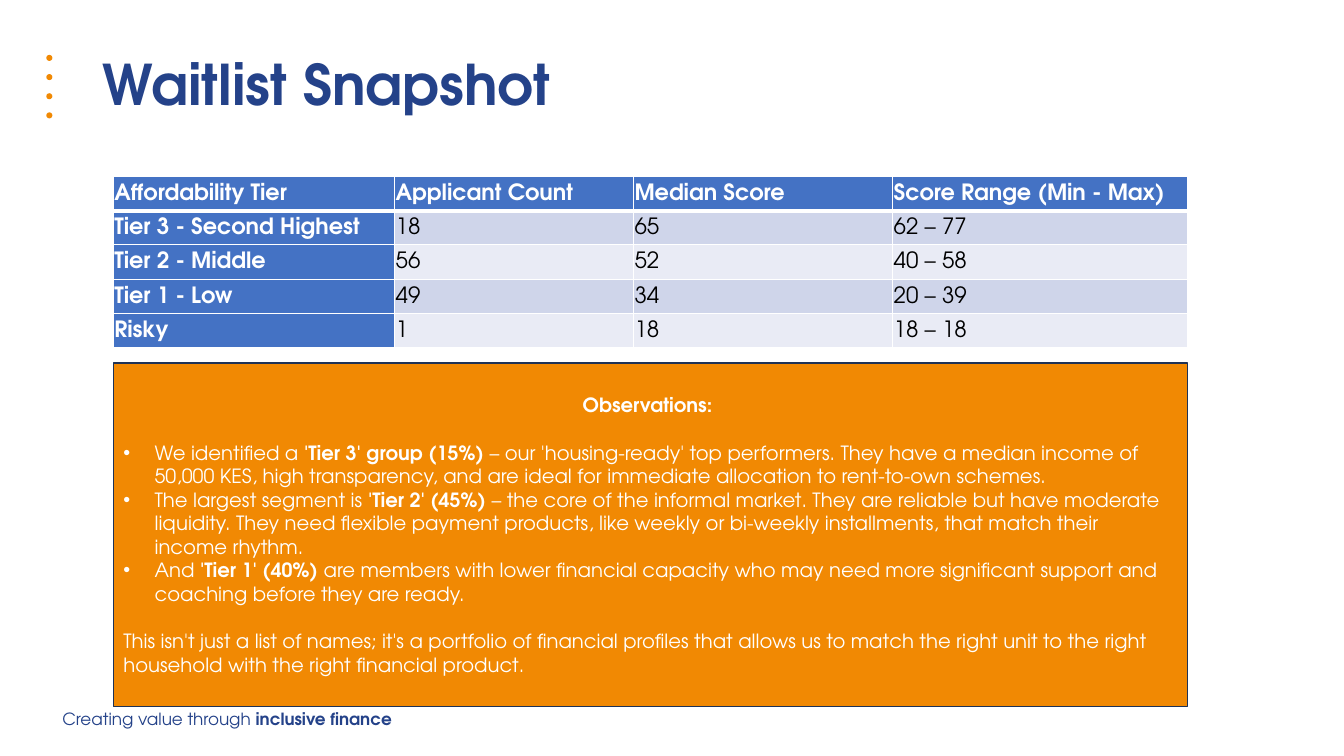
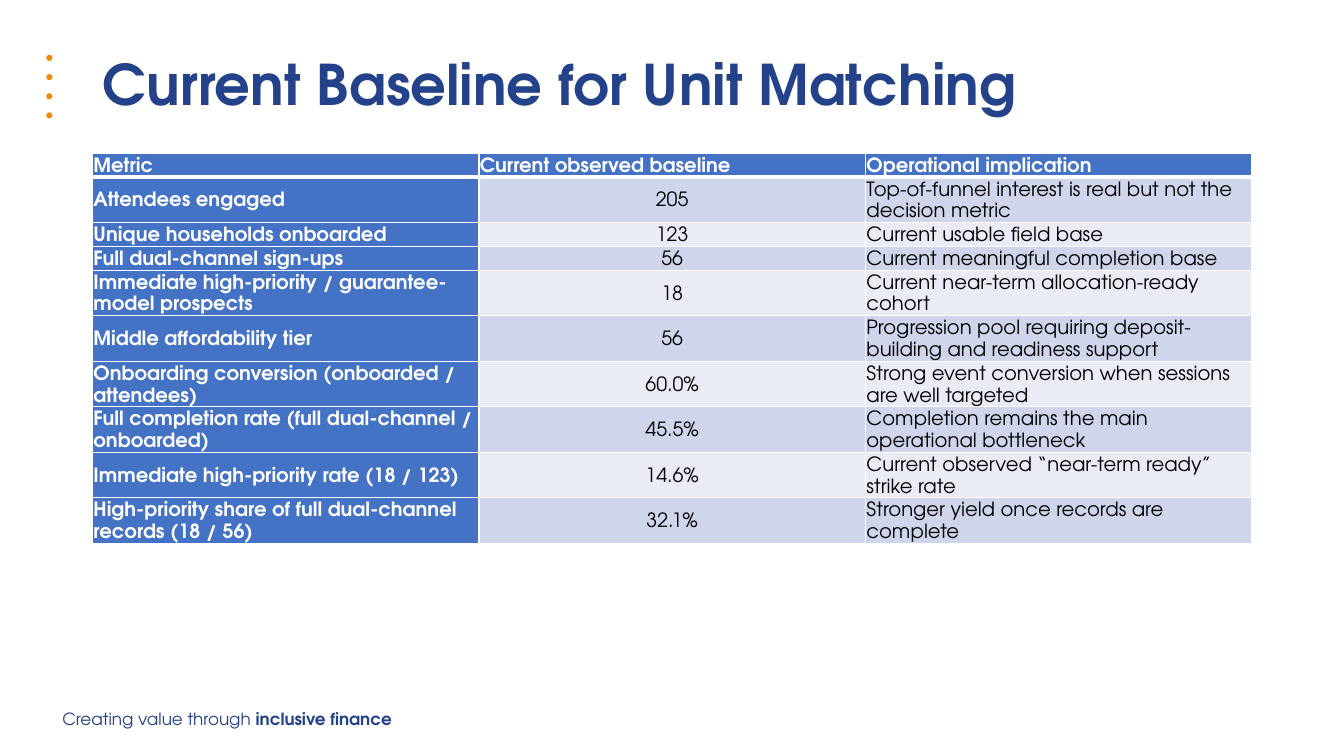
from dataclasses import dataclass

import pptx
import pptx.dml.color
import pptx.enum.shapes
import pptx.enum.text
import pptx.oxml.ns
import pptx.util
from lxml import etree

ALIGN = pptx.enum.text.PP_ALIGN
MIDDLE = pptx.enum.text.MSO_ANCHOR.MIDDLE
SHAPES = pptx.enum.shapes.MSO_SHAPE
qn = pptx.oxml.ns.qn


@dataclass(frozen=True)
class Theme:
    font: str = "TeX Gyre Adventor"
    bullet_font: str = "Arial"
    navy: str = "244289"
    outline: str = "1E3256"
    orange: str = "F18903"
    blue: str = "4472C4"
    dark_band: str = "CFD5EA"
    light_band: str = "E9EBF5"
    white: str = "FFFFFF"
    black: str = "000000"
    title_size: int = 40
    table_size: int = 16
    body_size: int = 14
    footer_size: int = 12


THEME = Theme()
CELL = 0.1  # inches: width of a grid column and height of a grid row


def grid(cells):
    return pptx.util.Inches(cells * CELL)


def area(left, top, width, height):
    return [grid(length) for length in (left, top, width, height)]


def color(value):
    return pptx.dml.color.RGBColor.from_string(value)


def write(paragraph, text, size=THEME.body_size, fill=THEME.white, bold=False,
          align=ALIGN.LEFT, line_spacing=1.0, space_before=0, space_after=0, bullet=False):
    """Fill a paragraph; parts between ** marks are bold."""
    paragraph.alignment = align
    paragraph.line_spacing = line_spacing
    paragraph.space_before = pptx.util.Pt(space_before)
    paragraph.space_after = pptx.util.Pt(space_after)
    if bullet:
        properties = paragraph._p.get_or_add_pPr()
        properties.set("marL", str(grid(3.1)))
        properties.set("indent", str(-grid(3.1)))
        etree.SubElement(properties, qn("a:buFont"), typeface=THEME.bullet_font)
        etree.SubElement(properties, qn("a:buChar"), char="•")
    for index, part in enumerate(text.split("**")):
        if part:
            run = paragraph.add_run()
            run.text = part
            run.font.name = THEME.font
            run.font.size = pptx.util.Pt(size)
            run.font.bold = bold or index % 2 == 1
            run.font.color.rgb = color(fill)


def add_border(cell, side, points):
    line = etree.SubElement(cell._tc.get_or_add_tcPr(), qn("a:ln" + side),
                            w=str(pptx.util.Pt(points)))
    fill = etree.SubElement(line, qn("a:solidFill"))
    etree.SubElement(fill, qn("a:srgbClr"), val=THEME.white)


class Deck:
    def __init__(self):
        self.presentation = pptx.Presentation()
        self.presentation.slide_width = pptx.util.Inches(13.33)
        self.presentation.slide_height = pptx.util.Inches(7.5)
        self.layout = self.presentation.slide_layouts[5]
        self.slide = None

    def add_slide(self, title):
        first = self.slide is None
        self.slide = self.presentation.slides.add_slide(self.layout)
        if first:
            self.decorate_layout()
        shape = self.slide.shapes.title
        shape.left, shape.top, shape.width, shape.height = area(9.2, 4, 115, 9.4)
        frame = shape.text_frame
        frame.auto_size = pptx.enum.text.MSO_AUTO_SIZE.NONE
        frame.vertical_anchor = MIDDLE
        write(frame.paragraphs[0], title, size=THEME.title_size, fill=THEME.navy,
              bold=True, line_spacing=0.9)

    def decorate_layout(self):
        """Draw the dots and the footer, then hand them to the layout."""
        dots = self.slide.shapes.add_group_shape()
        for row in range(4):
            self.add_shape(SHAPES.OVAL, (4.6, 5.45 + 1.9 * row, 0.6, 0.6), THEME.orange,
                           shapes=dots.shapes)
        footer = self.slide.shapes.add_textbox(*area(5.2, 69.8, 35.3, 3))
        footer.text_frame.word_wrap = False
        footer.text_frame.vertical_anchor = MIDDLE
        write(footer.text_frame.paragraphs[0], "Creating value through **inclusive finance**",
              size=THEME.footer_size, fill=THEME.navy)
        tree = self.layout.shapes.element
        for shape in (dots, footer):
            tree.append(shape.element)
        for number, properties in enumerate(tree.iter(qn("p:cNvPr")), 1):
            properties.set("id", str(number))

    def add_shape(self, kind, place, fill, outline=None, shapes=None):
        shapes = self.slide.shapes if shapes is None else shapes
        shape = shapes.add_shape(kind, *area(*place))
        shape.shadow.inherit = False
        shape.fill.solid()
        shape.fill.fore_color.rgb = color(fill)
        if outline:
            shape.line.color.rgb = color(outline)
            shape.line.width = pptx.util.Pt(1)
        else:
            shape.line.fill.background()
        return shape

    def add_panel(self, place, paragraphs):
        """Add an outlined box from (text, format) pairs."""
        frame = self.add_shape(SHAPES.RECTANGLE, place, THEME.orange, THEME.outline).text_frame
        frame.word_wrap = True
        frame.vertical_anchor = MIDDLE
        for index, (text, style) in enumerate(paragraphs):
            paragraph = frame.add_paragraph() if index else frame.paragraphs[0]
            write(paragraph, text, **style)

    def add_table(self, left, top, columns, heights, rows, size, line_spacing,
                  header_align=ALIGN.LEFT, aligns=None):
        aligns = aligns or [ALIGN.LEFT] * len(columns)
        table = self.slide.shapes.add_table(
            len(rows), len(columns), *area(left, top, sum(columns), sum(heights))).table
        table.horz_banding = False
        for column, width in zip(table.columns, columns):
            column.width = grid(width)
        for row_index, (height, texts) in enumerate(zip(heights, rows)):
            table.rows[row_index].height = grid(height)
            for column_index, text in enumerate(texts):
                heading = row_index == 0 or column_index == 0
                band = THEME.dark_band if row_index % 2 else THEME.light_band
                cell = table.cell(row_index, column_index)
                cell.margin_left = cell.margin_right = grid(0.1)
                cell.margin_top = cell.margin_bottom = grid(0.1)
                cell.vertical_anchor = MIDDLE
                for side in "LRTB":
                    under_header = (row_index, side) in ((0, "B"), (1, "T"))
                    add_border(cell, side, 3 if under_header else 1)
                cell.fill.solid()
                cell.fill.fore_color.rgb = color(THEME.blue if heading else band)
                write(cell.text_frame.paragraphs[0], text, size=size, bold=heading,
                      fill=THEME.white if heading else THEME.black,
                      align=aligns[column_index] if row_index else header_align,
                      line_spacing=line_spacing)


def add_waitlist(deck):
    deck.add_slide("Waitlist Snapshot")
    rows = [
        ("Affordability Tier", "Applicant Count", "Median Score", "Score Range (Min - Max)"),
        ("Tier 3 - Second Highest", "18", "65", "62 – 77"),
        ("Tier 2 - Middle", "56", "52", "40 – 58"),
        ("Tier 1 - Low", "49", "34", "20 – 39"),
        ("Risky", "1", "18", "18 – 18"),
    ]
    left = 11.25
    deck.add_table(left, 17.5, (27.9, 23.7, 25.7, 29.2), [3.4] * len(rows), rows,
                   size=THEME.table_size, line_spacing=1.07)
    gap = 17
    deck.add_panel((left, 36, 106.5, 34.1), [
        ("Observations: ", {"bold": True, "align": ALIGN.CENTER, "space_after": gap}),
        ("We identified a **'Tier 3' group (15%)** – our 'housing-ready' top performers. "
         "They have a median income of 50,000 KES, high transparency, and are ideal for "
         "immediate allocation to rent-to-own schemes.", {"bullet": True}),
        ("The largest segment is **'Tier 2' (45%)** – the core of the informal market. "
         "They are reliable but have moderate liquidity. They need flexible payment products, "
         "like weekly or bi-weekly installments, that match their income rhythm.",
         {"bullet": True}),
        ("And **'Tier 1' (40%)** are members with lower financial capacity who may need more "
         "significant support and coaching before they are ready.", {"bullet": True}),
        ("This isn't just a list of names; it's a portfolio of financial profiles that allows "
         "us to match the right unit to the right household with the right financial product.",
         {"space_before": gap}),
    ])


def add_baseline(deck):
    deck.add_slide("Current Baseline for Unit Matching")
    rows = [
        ("Metric", "Current observed baseline", "Operational implication"),
        ("Attendees engaged", "205",
         "Top-of-funnel interest is real but not the decision metric"),
        ("Unique households onboarded", "123", "Current usable field base"),
        ("Full dual-channel sign-ups", "56", "Current meaningful completion base"),
        ("Immediate high-priority / guarantee-model prospects", "18",
         "Current near-term allocation-ready cohort"),
        ("Middle affordability tier", "56",
         "Progression pool requiring deposit-building and readiness support"),
        ("Onboarding conversion (onboarded / attendees)", "60.0%",
         "Strong event conversion when sessions are well targeted"),
        ("Full completion rate (full dual-channel / onboarded)", "45.5%",
         "Completion remains the main operational bottleneck"),
        ("Immediate high-priority rate (18 / 123)", "14.6%",
         "Current observed “near-term ready” strike rate"),
        ("High-priority share of full dual-channel records (18 / 56)", "32.1%",
         "Stronger yield once records are complete"),
    ]
    one_line, two_lines = 2.36, 4.52
    heights = [one_line if index in (0, 2, 3) else two_lines for index in range(len(rows))]
    deck.add_table(9.17, 15.2, [115 / 3] * 3, heights, rows, size=THEME.body_size,
                   line_spacing=1.2, header_align=ALIGN.JUSTIFY,
                   aligns=(ALIGN.LEFT, ALIGN.CENTER, ALIGN.LEFT))


def main():
    deck = Deck()
    add_waitlist(deck)
    add_baseline(deck)
    deck.presentation.save("out.pptx")


if __name__ == "__main__":
    main()
